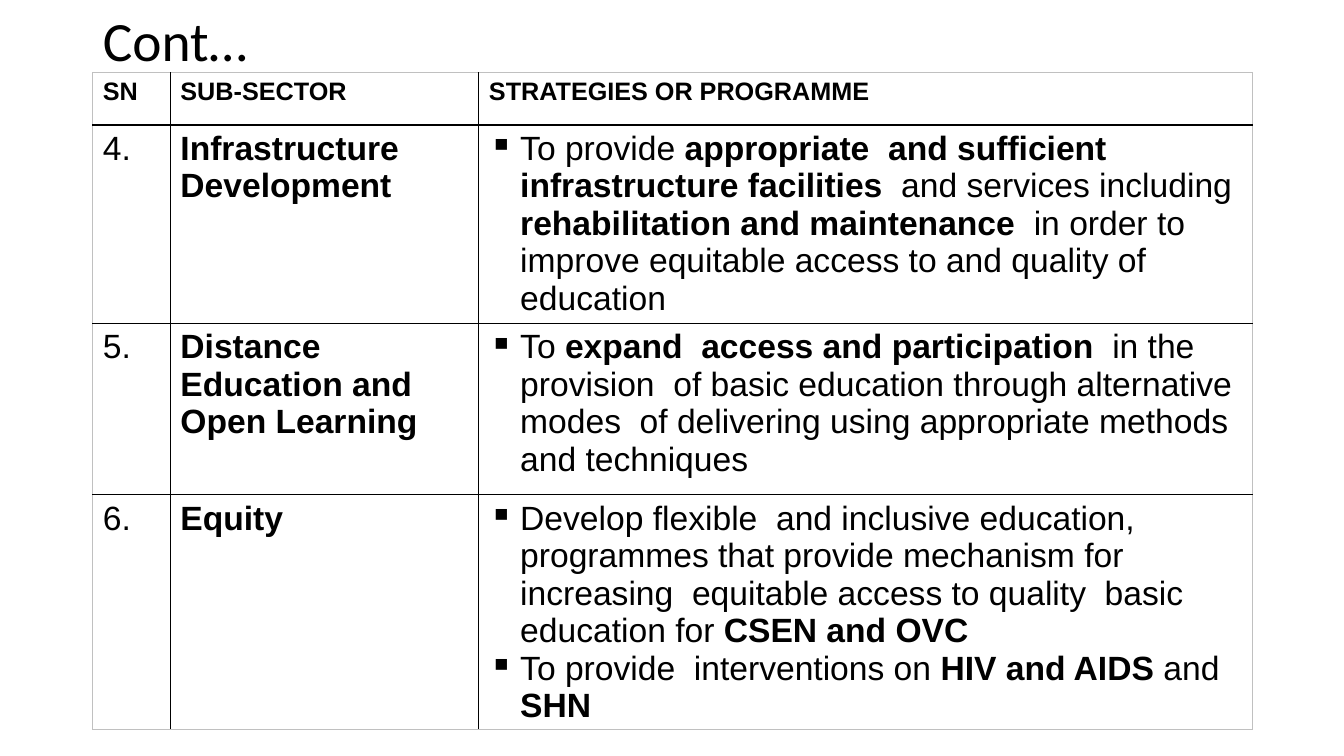
import pptx
import pptx.util
import pptx.dml.color
import pptx.enum.text
import pptx.oxml
import pptx.oxml.ns
from pptx.util import Inches

BLACK = pptx.dml.color.RGBColor(0x00, 0x00, 0x00)
GREY = pptx.dml.color.RGBColor(0xC0, 0xC0, 0xC0)

COL_WIDTHS = [0.77, 3.06, 7.67]
ROW_HEIGHTS = [0.52, 1.97, 1.7, 2.33]
HEADINGS = ["SN", "SUB-SECTOR", "STRATEGIES OR PROGRAMME"]

# Asterisks enclose the bold words of a strategy
SECTORS = [
    ("4.", "Infrastructure Development", [
        "To provide *appropriate  and sufficient infrastructure facilities  *"
        "and services including *rehabilitation and maintenance  *"
        "in order to improve equitable access to and quality of education"]),
    ("5.", "Distance Education and Open Learning", [
        "To *expand  access and participation  *in the provision  of basic "
        "education through alternative modes  of delivering using "
        "appropriate methods and techniques"]),
    ("6.", "Equity", [
        "Develop flexible  and inclusive education, programmes that provide "
        "mechanism for increasing  equitable access to quality  basic "
        "education for *CSEN and OVC*",
        "To provide  interventions on *HIV and AIDS *and *SHN*"]),
]


def format_run(r, size, bold=False, name="Arial"):
    r.font.name = name
    r.font.size = pptx.util.Pt(size)
    r.font.bold = bold
    r.font.color.rgb = BLACK


def add_bullet(p):
    pPr = p._p.get_or_add_pPr()
    pPr.set("marL", str(Inches(0.31)))
    pPr.set("indent", str(-Inches(0.31)))
    bullet = pptx.oxml.parse_xml(
        '<a:buChar %s char="▪"/>' % pptx.oxml.ns.nsdecls("a"))
    pPr.append(bullet)


def set_border(cell, side, color, width):
    line = pptx.oxml.parse_xml(
        '<a:%s %s w="%d"><a:solidFill><a:srgbClr val="%s"/></a:solidFill></a:%s>'
        % (side, pptx.oxml.ns.nsdecls("a"), pptx.util.Pt(width), color, side))
    cell._tc.get_or_add_tcPr().append(line)


def write_label(cell, text, size, bold):
    p = cell.text_frame.paragraphs[0]
    p.text = text
    format_run(p.runs[0], size, bold)


def write_strategies(cell, strategies):
    tf = cell.text_frame
    for i, strategy in enumerate(strategies):
        p = tf.add_paragraph() if i else tf.paragraphs[0]
        add_bullet(p)
        for j, part in enumerate(strategy.split("*")):
            if part:
                r = p.add_run()
                r.text = part
                format_run(r, 24, j % 2 == 1)


def add_title(slide, left, top, width, height):
    sp = slide.shapes.title
    sp.left, sp.top, sp.width, sp.height = left, top, width, height
    tf = sp.text_frame
    tf.text = "Cont…"
    tf.auto_size = pptx.enum.text.MSO_AUTO_SIZE.NONE
    tf.vertical_anchor = pptx.enum.text.MSO_ANCHOR.MIDDLE
    p = tf.paragraphs[0]
    p.alignment = pptx.enum.text.PP_ALIGN.LEFT
    p.line_spacing = 0.9
    format_run(p.runs[0], 39.6, name="Calibri")


def add_sector_table(slide, left, top, width, height):
    n_rows, n_cols = len(ROW_HEIGHTS), len(COL_WIDTHS)
    table = slide.shapes.add_table(
        n_rows, n_cols, left, top, width, height).table
    for column, share in zip(table.columns, COL_WIDTHS):
        column.width = int(width * share / sum(COL_WIDTHS))
    for row, share in zip(table.rows, ROW_HEIGHTS):
        row.height = int(height * share / sum(ROW_HEIGHTS))

    # Wording
    for col, heading in enumerate(HEADINGS):
        write_label(table.cell(0, col), heading, 18, True)
    for row, (number, sector, strategies) in enumerate(SECTORS, 1):
        write_label(table.cell(row, 0), number, 24, False)
        write_label(table.cell(row, 1), sector, 24, True)
        write_strategies(table.cell(row, 2), strategies)

    # Black inner rules, pale outer frame
    for row in range(n_rows):
        for col in range(n_cols):
            cell = table.cell(row, col)
            outer = {"lnL": col == 0, "lnR": col == n_cols - 1,
                     "lnT": row == 0, "lnB": row == n_rows - 1}
            for side, is_outer in outer.items():
                set_border(cell, side, GREY if is_outer else BLACK,
                           0.5 if is_outer else 1)
            cell.fill.background()


def main():
    prs = pptx.Presentation()
    prs.slide_width, prs.slide_height = Inches(13.33), Inches(7.5)
    slide = prs.slides.add_slide(prs.slide_layouts[5])
    add_title(slide, Inches(0.92), Inches(0.16), Inches(11.5), Inches(0.55))
    add_sector_table(slide, Inches(0.92), Inches(0.72),
                     Inches(11.5), Inches(sum(ROW_HEIGHTS)))
    prs.save("out.pptx")


if __name__ == "__main__":
    main()
